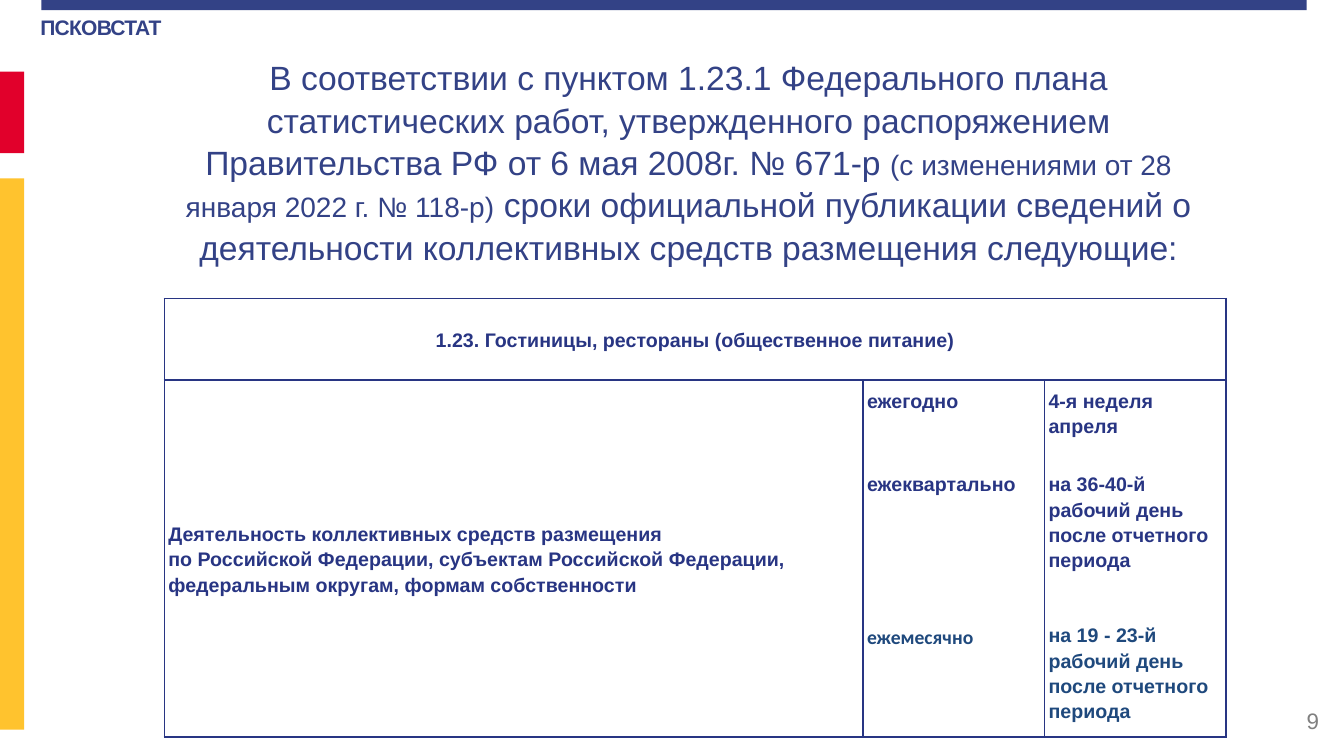
import dataclasses

import lxml.etree
import pptx
import pptx.dml.color
import pptx.enum.shapes
import pptx.enum.text
import pptx.oxml.ns
import pptx.util
from pptx.util import Inches

ALIGN = pptx.enum.text.PP_ALIGN
ANCHOR = pptx.enum.text.MSO_ANCHOR


@dataclasses.dataclass(frozen=True)
class Theme:
    font: str = "Arial"
    accent_font: str = "Calibri"
    blue: str = "334286"
    red: str = "E1002B"
    yellow: str = "FFC32E"
    grey: str = "808080"
    table_blue: str = "283583"
    month_blue: str = "1F497D"
    title_size: int = 24
    note_size: int = 20
    number_size: int = 16
    agency_size: int = 15
    table_size: int = 14


THEME = Theme()

TITLE_RUNS = [
    ("В соответствии с пунктом 1.23.1 Федерального плана статистических работ, "
     "утвержденного распоряжением Правительства РФ от 6 мая 2008г. № 671-р ",
     THEME.title_size),
    ("(с изменениями от 28 января 2022 г. № 118-р)", THEME.note_size),
    (" сроки официальной публикации сведений о деятельности коллективных "
     "средств размещения следующие:", THEME.title_size),
]
TABLE_HEADING = "1.23. Гостиницы, рестораны (общественное питание)"
ACTIVITY = (
    "Деятельность коллективных средств размещения\n"
    "по Российской Федерации, субъектам Российской Федерации, "
    "федеральным округам, формам собственности"
)
# Frequency, publication term, frequency font, colour
SCHEDULE = [
    ("ежегодно", "4-я неделя апреля", THEME.font, THEME.table_blue),
    ("ежеквартально", "на 36-40-й рабочий день после отчетного периода",
     THEME.font, THEME.table_blue),
    ("ежемесячно", "на 19 - 23-й рабочий день после отчетного периода",
     THEME.accent_font, THEME.month_blue),
]
COLUMN_WIDTHS = [6.93, 1.8, 1.8]
ROW_HEIGHTS = [0.81, 0.83, 1.5, 1.15]


def rgb(colour):
    return pptx.dml.color.RGBColor.from_string(colour)


def format_run(run, size, colour, bold=False, font=THEME.font):
    run.font.name = font
    run.font.size = pptx.util.Pt(size)
    run.font.color.rgb = rgb(colour)
    run.font.bold = bold


def add_bar(slide, left, top, width, height, colour):
    bar = slide.shapes.add_shape(
        pptx.enum.shapes.MSO_SHAPE.RECTANGLE,
        Inches(left), Inches(top), Inches(width), Inches(height))
    bar.shadow.inherit = False
    bar.fill.solid()
    bar.fill.fore_color.rgb = rgb(colour)
    bar.line.fill.background()


def add_text(slide, left, top, width, height, runs, colour, align, bold=False):
    """Add a one-paragraph text box from (text, size) pairs."""
    box = slide.shapes.add_textbox(
        Inches(left), Inches(top), Inches(width), Inches(height))
    box.text_frame.word_wrap = True
    paragraph = box.text_frame.paragraphs[0]
    paragraph.alignment = align
    for text, size in runs:
        run = paragraph.add_run()
        run.text = text
        format_run(run, size, colour, bold)
    return box


def set_borders(cell, sides):
    """Draw the given sides (letters of LRTB) and hide the others."""
    properties = cell._tc.get_or_add_tcPr()
    for position, side in enumerate("LRTB"):
        line = lxml.etree.Element(
            pptx.oxml.ns.qn(f"a:ln{side}"), w=str(pptx.util.Pt(1)))
        if side in sides:
            fill = lxml.etree.SubElement(line, pptx.oxml.ns.qn("a:solidFill"))
            lxml.etree.SubElement(
                fill, pptx.oxml.ns.qn("a:srgbClr"), val=THEME.table_blue)
        else:
            lxml.etree.SubElement(line, pptx.oxml.ns.qn("a:noFill"))
        properties.insert(position, line)


def fill_cell(cell, text, align=ALIGN.LEFT, anchor=ANCHOR.TOP,
              font=THEME.font, colour=THEME.table_blue):
    cell.text_frame.text = text
    cell.vertical_anchor = anchor
    for paragraph in cell.text_frame.paragraphs:
        paragraph.alignment = align
        paragraph.line_spacing = 1.15
        for run in paragraph.runs:
            format_run(run, THEME.table_size, colour, True, font)


def add_schedule(slide):
    table = slide.shapes.add_table(
        len(ROW_HEIGHTS), len(COLUMN_WIDTHS), Inches(1.63), Inches(2.96),
        Inches(sum(COLUMN_WIDTHS)), Inches(sum(ROW_HEIGHTS))).table
    table.first_row = table.horz_banding = False
    for column, width in zip(table.columns, COLUMN_WIDTHS):
        column.width = Inches(width)
    for row, height in zip(table.rows, ROW_HEIGHTS):
        row.height = Inches(height)

    # Plain cells, with no lines between the terms
    last = len(ROW_HEIGHTS) - 1
    for row_index, row in enumerate(table.rows):
        for column_index, cell in enumerate(row.cells):
            cell.margin_left = cell.margin_right = Inches(0.04)
            cell.margin_top = cell.margin_bottom = Inches(0.07)
            cell.fill.background()
            sides = "LR"
            if row_index <= 1 or column_index == 0:
                sides += "T"
            if row_index in (0, last) or column_index == 0:
                sides += "B"
            set_borders(cell, sides)

    # Merged heading and activity, then the terms
    table.cell(0, 0).merge(table.cell(0, 2))
    table.cell(1, 0).merge(table.cell(last, 0))
    fill_cell(table.cell(0, 0), TABLE_HEADING, ALIGN.CENTER, ANCHOR.MIDDLE)
    fill_cell(table.cell(1, 0), ACTIVITY, anchor=ANCHOR.MIDDLE)
    for row_index, (frequency, term, font, colour) in enumerate(SCHEDULE, 1):
        fill_cell(table.cell(row_index, 1), frequency, font=font, colour=colour)
        fill_cell(table.cell(row_index, 2), term, colour=colour)


def main():
    presentation = pptx.Presentation()
    presentation.slide_width = Inches(13.33)
    presentation.slide_height = Inches(7.5)
    slide = presentation.slides.add_slide(presentation.slide_layouts[6])

    # Agency name and coloured bars
    agency = add_text(slide, 0.4, 0.13, 1.4, 0.27,
                      [("ПСКОВСТАТ", THEME.agency_size)],
                      THEME.blue, ALIGN.LEFT, bold=True)
    frame = agency.text_frame
    frame.word_wrap = False
    frame.margin_left = frame.margin_right = frame.margin_bottom = 0
    frame.margin_top = Inches(0.01)
    frame.paragraphs[0].runs[0].font._element.set("spc", "-50")
    add_bar(slide, 0.41, 0, 12.55, 0.1, THEME.blue)
    add_bar(slide, 0, 0.71, 0.24, 0.81, THEME.red)
    add_bar(slide, 0, 1.77, 0.24, 5.47, THEME.yellow)

    # Slide number
    number = add_text(slide, 10.18, 6.95, 3, 0.4, [("9", THEME.number_size)],
                      THEME.grey, ALIGN.RIGHT)
    number.text_frame.vertical_anchor = ANCHOR.MIDDLE

    # Title and table
    title = add_text(slide, 1.55, 0.5, 10.56, 1.97, TITLE_RUNS,
                     THEME.blue, ALIGN.CENTER)
    title.text_frame.paragraphs[0].line_spacing = 1.05
    add_schedule(slide)

    presentation.save("out.pptx")


if __name__ == "__main__":
    main()
